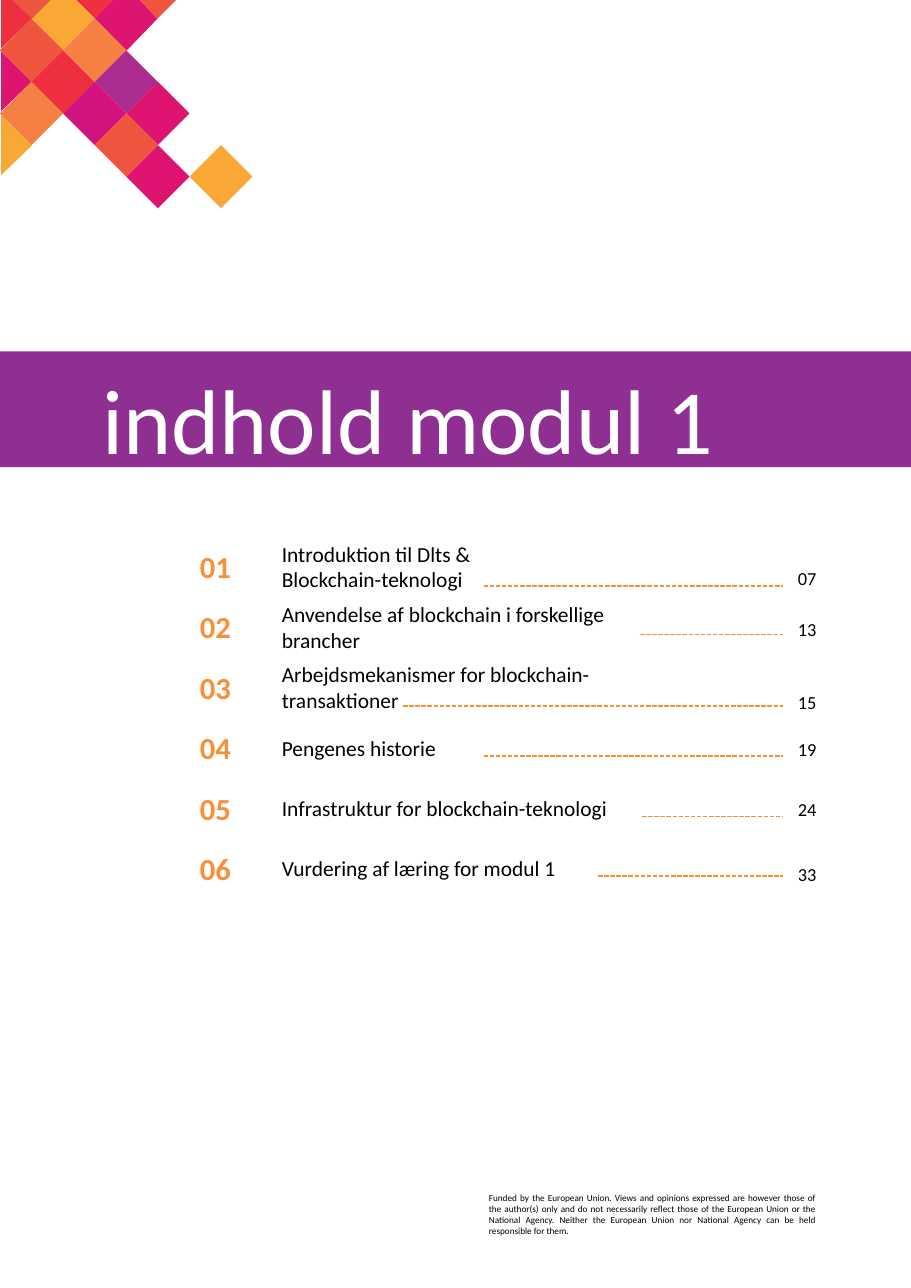
from lxml import etree
from pptx import Presentation
from pptx.dml.color import RGBColor
from pptx.enum import dml, shapes, text
from pptx.oxml import ns
from pptx.util import Inches, Pt

LEFT, MID, RIGHT = text.PP_ALIGN.LEFT, text.PP_ALIGN.CENTER, text.PP_ALIGN.RIGHT
TOP, CENTRE = text.MSO_ANCHOR.TOP, text.MSO_ANCHOR.MIDDLE
ORANGE = "F79037"

deck = Presentation()
deck.slide_width, deck.slide_height = Inches(8.27), Inches(11.69)
slide = deck.slides.add_slide(deck.slide_layouts[6])


def paint(shape, color):
    shape.shadow.inherit = False
    shape.fill.solid()
    shape.fill.fore_color.rgb = RGBColor.from_string(color)
    shape.line.fill.background()


def write(words, x, y, w, h, size, color="000000", align=LEFT, anchor=CENTRE, bold=False):
    box = slide.shapes.add_textbox(Inches(x), Inches(y), Inches(w), Inches(h))
    frame = box.text_frame
    frame.word_wrap = True
    frame.vertical_anchor = anchor
    frame.text = words
    for para in frame.paragraphs:
        para.alignment = align
        for run in para.runs:
            run.font.name = "Calibri"
            run.font.size = Pt(size)
            run.font.bold = bold
            run.font.color.rgb = RGBColor.from_string(color)


band = slide.shapes.add_shape(
    shapes.MSO_SHAPE.RECTANGLE, 0, Inches(3.19), Inches(8.27), Inches(1.05))
paint(band, "8E2F91")

cuts = [
    ("ED2F40", [(0.86, 0.17), (1.03, 0), (0.69, 0)]),
    ("DD1470", [(1.15, 0.46), (1.43, 0.17), (1.27, 0), (1.03, 0), (0.86, 0.17)]),
    ("EF543F", [(1.43, 0.17), (1.6, 0), (1.27, 0)]),
    ("F9A835", [(0.57, 0.46), (0.86, 0.17), (0.69, 0), (0.46, 0), (0.29, 0.17)]),
    ("DD1470", [(0.01, 1.01), (0.29, 0.74), (0.01, 0.47)]),
    ("F9A835", [(0.01, 1.59), (0.29, 1.32), (0.01, 1.04)]),
    ("EF543F", [(0.29, 0.17), (0.46, 0), (0.12, 0)]),
    ("ED2F40", [(0.01, 0.44), (0.29, 0.17), (0.12, 0), (0.01, 0)]),
]
for color, points in cuts:
    spots = [(Inches(x), Inches(y)) for x, y in points]
    pen = slide.shapes.build_freeform(*spots[0])
    pen.add_line_segments(spots[1:])
    paint(pen.convert_to_shape(), color)

step = Inches(1.72) / 6
tiles = [
    (0, 0, "EF543F"), (1, 1, "ED2F40"), (2, 0, "F48043"), (0, 2, "F48043"),
    (6, 4, "F9A835"), (4, 4, "DD1470"), (4, 2, "DD1470"), (3, 1, "AC2C90"),
    (2, 2, "D3137D"), (3, 3, "EF543F"),
]
for col, row, color in tiles:
    tile = slide.shapes.add_shape(
        shapes.MSO_SHAPE.DIAMOND, int(col * step), int(Inches(0.17) + row * step),
        int(2 * step), int(2 * step))
    paint(tile, color)

write("Funded by the European Union. Views and opinions expressed are however those of "
      "the author(s) only and do not necessarily reflect those of the European Union or "
      "the National Agency. Neither the European Union nor National Agency can be held "
      "responsible for them.",
      4.34, 10.77, 3.16, 0.5, 6, align=text.PP_ALIGN.JUSTIFY, anchor=TOP)

topics = [
    ("Introduktion til Dlts &\nBlockchain-teknologi", "07", 5.06, 4.39, 5.32),
    ("Anvendelse af blockchain i forskellige brancher", "13", 5.52, 5.81, 5.76),
    ("Arbejdsmekanismer for blockchain-transaktioner", "15", 6.18, 3.66, 6.41),
    ("Pengenes historie", "19", 6.61, 4.39, 6.86),
    ("Infrastruktur for blockchain-teknologi", "24", 7.15, 5.83, 7.41),
    ("Vurdering af læring for modul 1", "33", 7.74, 5.43, 7.95),
]
for i, (topic, page, top, start, level) in enumerate(topics):
    y = 4.95 + 0.548 * i
    write(f"{i + 1:02}", 1.6, y, 0.71, 0.38, 20, ORANGE, MID, bold=True)
    write(topic, 2.46, y, 3.87, 0.38, 14)
    write(page, 7.01, top, 0.5, 0.38, 12, align=RIGHT)
    dash = slide.shapes.add_connector(
        shapes.MSO_CONNECTOR.STRAIGHT,
        Inches(start), Inches(level), Inches(7.11), Inches(level))
    dash.line.color.rgb = RGBColor.from_string(ORANGE)
    dash.line.width = Pt(1)
    dash.line.dash_style = dml.MSO_LINE.SQUARE_DOT
    etree.SubElement(dash.element.spPr, ns.qn("a:effectLst"))

write("indhold modul 1", 0.83, 3.24, 7, 1.06, 60, "FFFFFF", anchor=TOP)

deck.save("out.pptx")
